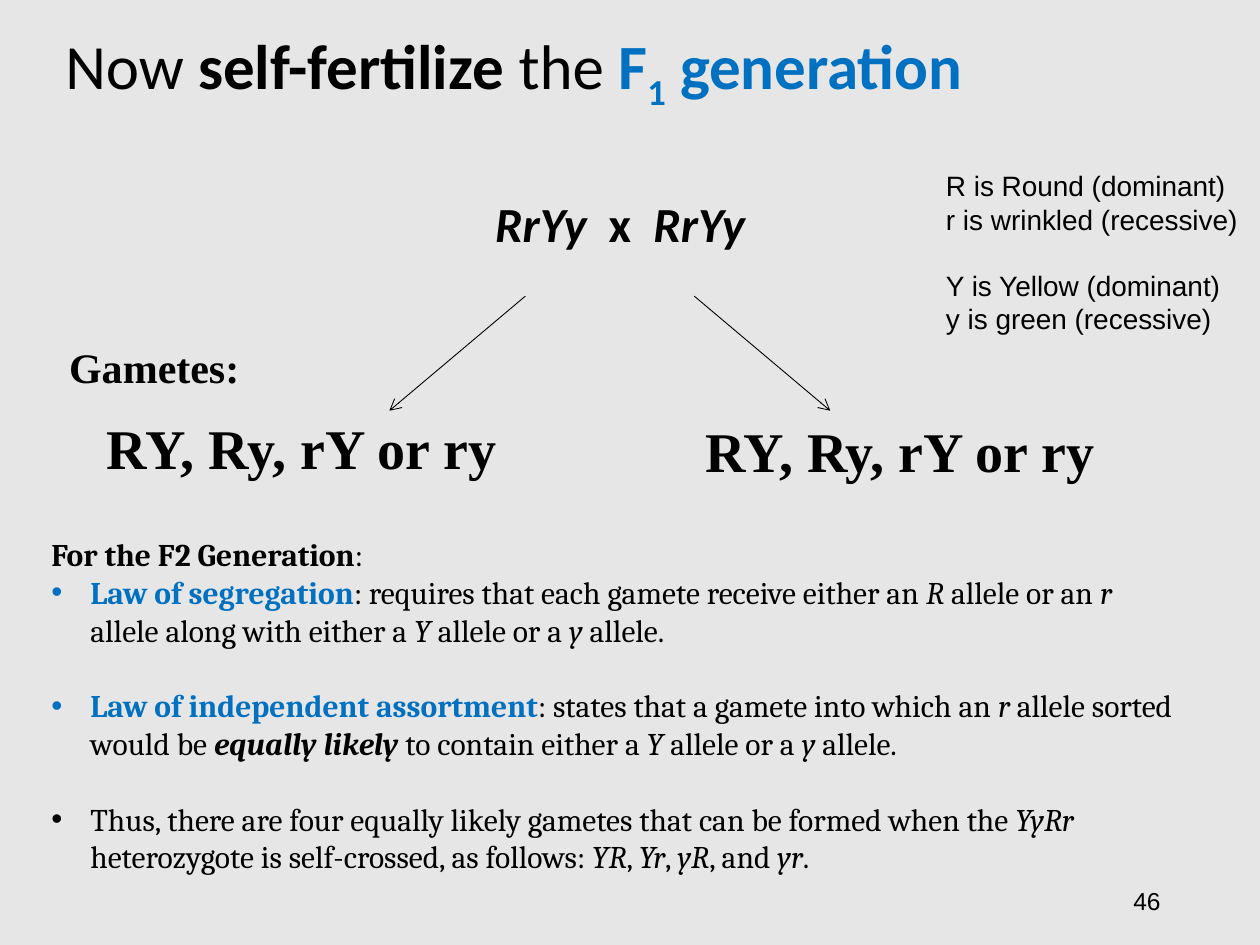
import pptx
import pptx.dml.color
import pptx.enum.shapes
import pptx.enum.text
import pptx.oxml
import pptx.oxml.ns
import pptx.util
from pptx.util import Inches

COLORS = {"background": "E7E6E6", "text": "000000", "accent": "0070C0"}
ALIGN = pptx.enum.text.PP_ALIGN
ANCHOR = pptx.enum.text.MSO_ANCHOR


def rgb(name):
    """Return the named palette colour."""
    return pptx.dml.color.RGBColor.from_string(COLORS[name])


def element(tag, **attributes):
    """Return a DrawingML element with the given attributes."""
    node = pptx.oxml.parse_xml(f"<a:{tag} {pptx.oxml.ns.nsdecls('a')}/>")
    for key, value in attributes.items():
        node.set(key, value)
    return node


class SlideBuilder:
    """Hold the current slide and its style; b, i, a, s mark bold, italic, accent, subscript."""

    def __init__(self, presentation):
        """Add a blank slide with the background colour."""
        self.slide = presentation.slides.add_slide(presentation.slide_layouts[6])
        self.slide.background.fill.solid()
        self.slide.background.fill.fore_color.rgb = rgb("background")

    def box(self, left, top, width, height, anchor=ANCHOR.TOP):
        """Add an empty wrapping text box and return its frame."""
        frame = self.slide.shapes.add_textbox(
            Inches(left), Inches(top), Inches(width), Inches(height)).text_frame
        frame.word_wrap = True
        frame.vertical_anchor = anchor
        return frame

    def paragraph(self, frame, runs, font, size, align=ALIGN.LEFT, before=0, spacing=None, bullet=False):
        """Write one paragraph from (text, marks) runs."""
        first = frame.paragraphs[0]
        paragraph = frame.add_paragraph() if first.runs else first
        paragraph.alignment = align
        paragraph.space_before = pptx.util.Pt(before)
        if spacing:
            paragraph.line_spacing = spacing
        if bullet:
            properties = paragraph._p.get_or_add_pPr()
            properties.set("marL", str(Inches(0.31)))
            properties.set("indent", str(Inches(-0.31)))
            properties.append(element("buFont", typeface="Arial"))
            properties.append(element("buChar", char="•"))
        for text, marks in runs:
            run = paragraph.add_run()
            run.text = text
            run.font.name = font
            run.font.size = pptx.util.Pt(size)
            run.font.bold = "b" in marks
            run.font.italic = "i" in marks
            run.font.color.rgb = rgb("accent" if "a" in marks else "text")
            if "s" in marks:
                run.font._element.set("baseline", "-25000")

    def label(self, text, place, font, size, marks="", **layout):
        """Add a text box with a single run."""
        anchor = layout.pop("anchor", ANCHOR.TOP)
        self.paragraph(self.box(*place, anchor), [(text, marks)], font, size, **layout)

    def arrow(self, start, end):
        """Add a thin line with an open arrowhead at its end."""
        connector = self.slide.shapes.add_connector(
            pptx.enum.shapes.MSO_CONNECTOR.STRAIGHT, *map(Inches, start + end))
        connector.line.color.rgb = rgb("text")
        connector.line.width = pptx.util.Pt(0.5)
        connector.line._get_or_add_ln().append(element("tailEnd", type="arrow"))
        connector._element.spPr.append(element("effectLst"))


def main():
    """Build and save the slide."""
    presentation = pptx.Presentation()
    presentation.slide_width, presentation.slide_height = Inches(10), Inches(7.5)
    builder = SlideBuilder(presentation)

    heading = builder.box(0.42, 0.17, 9, 2.75)
    title = [("Now ", ""), ("self-fertilize", "b"), (" the ", ""),
             ("F", "ba"), ("1", "bas"), (" generation", "ba")]
    cross = [("RrYy", "bi"), ("  x  ", "b"), ("RrYy", "bi")]
    builder.paragraph(heading, title, "Calibri", 36, before=7.5, spacing=0.9)
    builder.paragraph(heading, cross, "Calibri", 28, align=ALIGN.CENTER, before=54.5, spacing=0.9)

    builder.label("46", (7.06, 6.95, 2.25, 0.4), "Arial", 14,
                  align=ALIGN.RIGHT, anchor=ANCHOR.MIDDLE)
    for left, top in [(0.75, 3.23), (5.5, 3.26)]:
        builder.label("RY, Ry, rY or ry", (left, top, 3.57, 0.64), "Times New Roman", 32, "b")
    for start, end in [(4.17, 3.09), (5.51, 6.59)]:
        builder.arrow((start, 2.35), (end, 3.26))
    builder.label("Gametes:", (0.45, 2.66, 1.75, 0.51), "Times New Roman", 24, "b")

    legend = builder.box(7.41, 1.29, 2.56, 1.45)
    for trait, gap in [("R is Round (dominant)", 0), ("r is wrinkled (recessive)", 0),
                       ("Y is Yellow (dominant)", 18.4), ("y is green (recessive)", 0)]:
        builder.paragraph(legend, [(trait, "")], "Arial", 16, before=gap)

    laws = builder.box(0.31, 4.2, 9.2, 2.83)
    either_y = [("Y ", "i"), ("allele or a ", ""), ("y ", "i"), ("allele.", "")]
    segregation = [("Law of segregation", "ba"),
                   (": requires that each gamete receive either an ", ""), ("R ", "i"),
                   ("allele or an ", ""), ("r ", "i"),
                   ("allele along with either a ", "")] + either_y
    assortment = [("Law of independent assortment", "ba"),
                  (": states that a gamete into which an ", ""), ("r ", "i"),
                  ("allele sorted would be ", ""), ("equally likely ", "bi"),
                  ("to contain either a ", "")] + either_y
    conclusion = [("Thus, there are four equally likely gametes that can be formed when the ", ""),
                  ("YyRr ", "i"), ("heterozygote is self-crossed, as follows: ", ""),
                  ("YR", "i"), (", ", ""), ("Yr", "i"), (", ", ""), ("yR", "i"),
                  (", and ", ""), ("yr", "i"), (".", "")]
    builder.paragraph(laws, [("For the F2 Generation", "b"), (":", "")], "Cambria", 18)
    for law, gap in [(segregation, 0), (assortment, 21.5), (conclusion, 21.5)]:
        builder.paragraph(laws, law, "Cambria", 18, before=gap, bullet=True)

    presentation.save("out.pptx")


if __name__ == "__main__":
    main()
